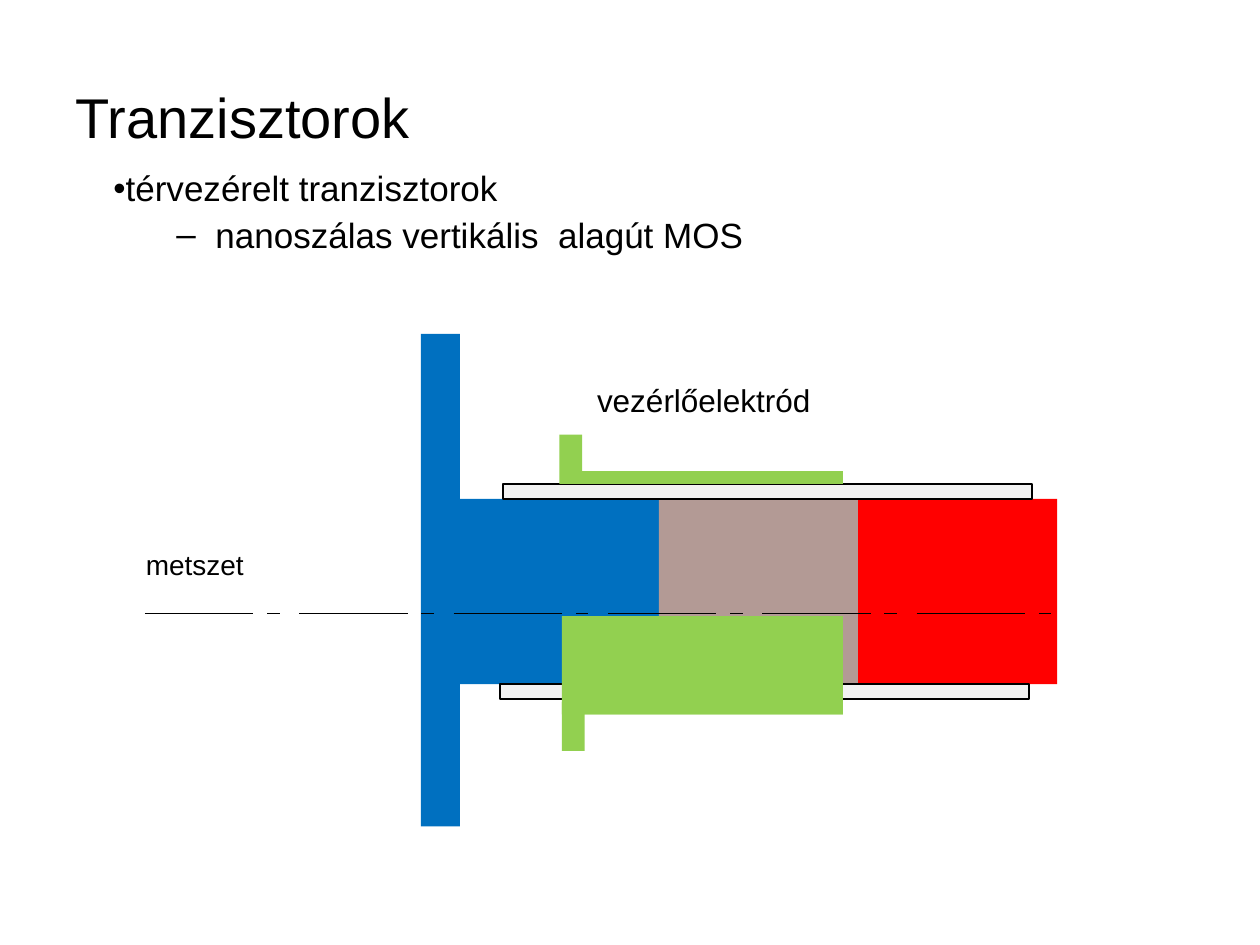
from lxml import etree
from pptx import Presentation
from pptx.dml.color import RGBColor
from pptx.enum.shapes import MSO_CONNECTOR, MSO_SHAPE
from pptx.enum.text import MSO_ANCHOR, MSO_AUTO_SIZE, PP_ALIGN
from pptx.oxml.ns import qn
from pptx.util import Inches, Pt

RECTANGLE = MSO_SHAPE.RECTANGLE
STRAIGHT = MSO_CONNECTOR.STRAIGHT
LEFT = PP_ALIGN.LEFT
TOP, MIDDLE = MSO_ANCHOR.TOP, MSO_ANCHOR.MIDDLE
NO_FIT = MSO_AUTO_SIZE.NONE

BLACK, BLUE, TAUPE, RED = "000000", "0070C0", "B39A95", "FF0000"
GREY, GREEN = "F2F2F2", "92D050"

# Wire: three equal segments side by side
WIRE_LEFT, WIRE_TOP, SEGMENT, WIRE_HEIGHT = 3.65, 3.96, 1.58, 1.47
WIRE_BOTTOM = WIRE_TOP + WIRE_HEIGHT
OXIDE = 0.12

# Section axis: a long dash and a short one in each period
AXIS_LEFT, AXIS_Y, PERIOD, PERIODS = 1.15, 4.87, 1.225, 6
DASHES = [(0, 0.86), (0.97, 0.1)]


def colour(value):
    return RGBColor.from_string(value)


def place(shape, left, top, width, height):
    shape.left, shape.top = Inches(left), Inches(top)
    shape.width, shape.height = Inches(width), Inches(height)


def write(para, text, size=20, spacing=None, before=0):
    para.alignment = LEFT
    para.space_before = Pt(before)
    if spacing:
        para.line_spacing = spacing
    span = para.add_run()
    span.text = text
    span.font.name = "Arial"
    span.font.size = Pt(size)
    span.font.color.rgb = colour(BLACK)


def set_frame(shape, anchor=TOP):
    frame = shape.text_frame
    frame.word_wrap = True
    frame.auto_size = NO_FIT
    frame.vertical_anchor = anchor
    return frame


def set_bullet(para, mark, margin, indent):
    properties = para._p.get_or_add_pPr()
    properties.set("marL", str(Inches(margin)))
    properties.set("indent", str(Inches(indent)))
    etree.SubElement(properties, qn("a:buChar")).set("char", mark)


def add_label(page, text, left, top, width, height, **style):
    box = page.shapes.add_textbox(0, 0, 0, 0)
    place(box, left, top, width, height)
    write(set_frame(box).paragraphs[0], text, **style)


def add_block(page, left, top, width, height, fill, outlined=False):
    block = page.shapes.add_shape(RECTANGLE, Inches(left), Inches(top),
                                  Inches(width), Inches(height))
    block.shadow.inherit = False
    block.fill.solid()
    block.fill.fore_color.rgb = colour(fill)
    if outlined:
        block.line.color.rgb = colour(BLACK)
        block.line.width = Pt(1)
    else:
        block.line.fill.background()


def add_dash(page, left, length):
    dash = page.shapes.add_connector(STRAIGHT, Inches(left), Inches(AXIS_Y),
                                     Inches(left + length), Inches(AXIS_Y))
    dash.line.color.rgb = colour(BLACK)
    dash.line.width = Pt(1)
    etree.SubElement(dash._element.spPr, qn("a:effectLst"))


def add_heading(page):
    title = page.shapes.title
    place(title, 0.5, 0.3, 9, 1.25)
    write(set_frame(title, MIDDLE).paragraphs[0], "Tranzisztorok", size=32)


def add_list(page):
    body = page.placeholders[1]
    place(body, 0.8, 1.31, 9, 0.94)
    frame = set_frame(body)
    first, second = frame.paragraphs[0], frame.add_paragraph()
    second.level = 1
    write(first, "térvezérelt tranzisztorok", spacing=0.9, before=5)
    write(second, "nanoszálas vertikális  alagút MOS", spacing=0.9, before=5)
    set_bullet(first, "•", 0, 0)
    set_bullet(second, "–", 0.81, -0.31)


def add_transistor(page):
    # Source plate and wire segments
    add_block(page, 3.34, 2.65, 0.31, 3.91, BLUE)
    for index, fill in enumerate((BLUE, TAUPE, RED)):
        add_block(page, WIRE_LEFT + index * SEGMENT, WIRE_TOP, SEGMENT,
                  WIRE_HEIGHT, fill)
    # Oxide above and below the wire
    for left, top in ((3.99, WIRE_TOP - OXIDE), (3.97, WIRE_BOTTOM)):
        add_block(page, left, top, 4.2, OXIDE, GREY, outlined=True)
    # Gate contacts, gate layers and the gate's lower half
    for left, top in ((4.44, 3.45), (4.46, 5.57)):
        add_block(page, left, top, 0.18, 0.39, GREEN)
    for top in (3.74, 5.57):
        add_block(page, 4.57, top, 2.12, 0.1, GREEN)
    add_label(page, "vezérlőelektród", 4.64, 3.02, 3.36, 0.59,
              size=18, spacing=0.85, before=4.5)
    add_block(page, 4.46, 4.89, 2.23, 0.78, GREEN)


def add_section_axis(page):
    for index in range(PERIODS):
        for offset, length in DASHES:
            add_dash(page, AXIS_LEFT + index * PERIOD + offset, length)
    add_label(page, "metszet", 1.06, 4.3, 2.3, 0.54, size=16)


def main():
    deck = Presentation()
    deck.slide_width, deck.slide_height = Inches(10), Inches(7.5)
    page = deck.slides.add_slide(deck.slide_layouts[1])
    add_heading(page)
    add_list(page)
    add_transistor(page)
    add_section_axis(page)
    deck.save("out.pptx")


if __name__ == "__main__":
    main()
